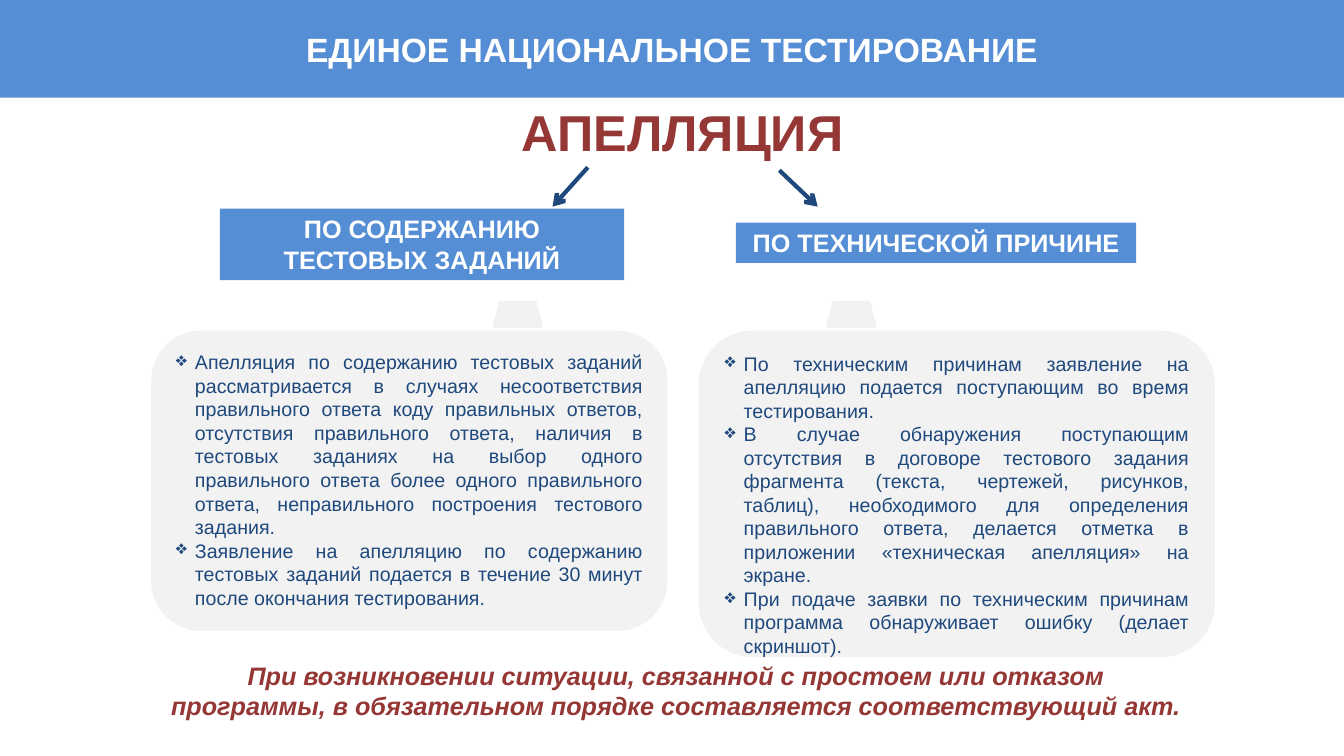
"""Build the slide on appeals in the unified national testing."""
from dataclasses import dataclass

from lxml.etree import SubElement
from pptx import Presentation
from pptx.dml.color import RGBColor
from pptx.enum.shapes import MSO_CONNECTOR, MSO_SHAPE
from pptx.enum.text import MSO_ANCHOR, MSO_AUTO_SIZE, PP_ALIGN
from pptx.oxml.ns import qn
from pptx.shapes.autoshape import Shape
from pptx.slide import Slide
from pptx.text.text import TextFrame
from pptx.util import Emu, Pt

PX = 9144


@dataclass(frozen=True)
class Theme:
    """Font, colours and type sizes of the slide."""
    font: str = "Arial"
    blue: str = "558ED5"
    navy: str = "1F497D"
    red: str = "953735"
    gray: str = "F2F2F2"
    white: str = "FFFFFF"
    heading: int = 36
    title: int = 24
    label: int = 18
    body: int = 14


@dataclass(frozen=True)
class Box:
    """Place of an element in px."""
    x: int
    y: int
    w: int
    h: int


@dataclass(frozen=True)
class Branch:
    """One kind of appeal: arrow, label, tab and card."""
    arrow: tuple[int, int, int, int]
    label_box: Box
    label: str
    tab_box: Box
    card_box: Box
    points: tuple[str, ...]


THEME = Theme()
BRANCHES = (
    Branch(
        (583, 166, 548, 205),
        Box(218, 207, 401, 71),
        "ПО СОДЕРЖАНИЮ ТЕСТОВЫХ ЗАДАНИЙ",
        Box(490, 300, 47, 24),
        Box(150, 328, 512, 298),
        (
            "Апелляция по содержанию тестовых заданий рассматривается в случаях "
            "несоответствия правильного ответа коду правильных ответов, отсутствия "
            "правильного ответа, наличия в тестовых заданиях на выбор одного "
            "правильного ответа более одного правильного ответа, неправильного "
            "построения тестового задания.",
            "Заявление на апелляцию по содержанию тестовых заданий подается в течение "
            "30 минут после окончания тестирования.",
        ),
    ),
    Branch(
        (773, 169, 811, 205),
        Box(730, 221, 397, 40),
        "ПО ТЕХНИЧЕСКОЙ ПРИЧИНЕ",
        Box(821, 300, 47, 24),
        Box(693, 328, 512, 324),
        (
            "По техническим причинам заявление на апелляцию подается поступающим во "
            "время тестирования.",
            "В случае обнаружения поступающим отсутствия в договоре тестового задания "
            "фрагмента (текста, чертежей, рисунков, таблиц), необходимого для "
            "определения правильного ответа, делается отметка в приложении "
            "«техническая апелляция» на экране.",
            "При подаче заявки по техническим причинам программа обнаруживает ошибку "
            "(делает скриншот).",
        ),
    ),
)


def px(n: int) -> Emu:
    """Turn px into EMU."""
    return Emu(n * PX)


def rgb(color: str) -> RGBColor:
    """Turn a hex string into a colour."""
    return RGBColor.from_string(color)


def write(tf: TextFrame, *texts: str, size: int, color: str, bold: bool = False,
          italic: bool = False, align: PP_ALIGN = PP_ALIGN.CENTER,
          anchor: MSO_ANCHOR = MSO_ANCHOR.TOP, bullet: str = "") -> None:
    """Write one formatted paragraph for each text."""
    tf.word_wrap = True
    tf.auto_size = MSO_AUTO_SIZE.NONE
    tf.vertical_anchor = anchor
    for i, text in enumerate(texts):
        p = tf.paragraphs[0] if i == 0 else tf.add_paragraph()
        p.alignment = align
        if bullet:
            pPr = p._p.get_or_add_pPr()
            pPr.set("marL", str(px(19)))
            pPr.set("indent", str(px(-19)))
            SubElement(pPr, qn("a:buChar")).set("char", bullet)
        r = p.add_run()
        r.text = text
        r.font.name = THEME.font
        r.font.size = Pt(size)
        r.font.bold = bold
        r.font.italic = italic
        r.font.color.rgb = rgb(color)


def add_box(s: Slide, kind: MSO_SHAPE, box: Box, fill: str, line: int = 0) -> Shape:
    """Add a flat filled shape, with a line of its own colour if asked."""
    sp = s.shapes.add_shape(kind, px(box.x), px(box.y), px(box.w), px(box.h))
    sp.shadow.inherit = False
    sp.fill.solid()
    sp.fill.fore_color.rgb = rgb(fill)
    if line:
        sp.line.color.rgb = rgb(fill)
        sp.line.width = Pt(line)
    else:
        sp.line.fill.background()
    return sp


def add_text(s: Slide, box: Box, text: str, size: int, italic: bool = False) -> None:
    """Add a bold red text box."""
    sp = s.shapes.add_textbox(px(box.x), px(box.y), px(box.w), px(box.h))
    write(sp.text_frame, text, size=size, color=THEME.red, bold=True, italic=italic)


def add_arrow(s: Slide, ends: tuple[int, int, int, int]) -> None:
    """Add a navy arrow between two points."""
    c = s.shapes.add_connector(MSO_CONNECTOR.STRAIGHT, *map(px, ends))
    c.line.color.rgb = rgb(THEME.navy)
    c.line.width = Pt(3)
    spPr = c._element.spPr
    SubElement(spPr.find(qn("a:ln")), qn("a:tailEnd")).set("type", "arrow")
    SubElement(spPr, qn("a:effectLst"))


def add_title(s: Slide, box: Box, text: str) -> None:
    """Turn the title placeholder into the top band."""
    sp = s.shapes.title
    sp.left, sp.top, sp.width, sp.height = map(px, (box.x, box.y, box.w, box.h))
    sp.fill.solid()
    sp.fill.fore_color.rgb = rgb(THEME.blue)
    write(sp.text_frame, text, size=THEME.title, color=THEME.white, bold=True,
          anchor=MSO_ANCHOR.MIDDLE)


def add_branch(s: Slide, branch: Branch) -> None:
    """Draw one kind of appeal."""
    card = add_box(s, MSO_SHAPE.ROUNDED_RECTANGLE, branch.card_box, THEME.gray)
    write(card.text_frame, *branch.points, size=THEME.body, color=THEME.navy,
          align=PP_ALIGN.JUSTIFY, bullet="❖")
    label = add_box(s, MSO_SHAPE.RECTANGLE, branch.label_box, THEME.blue)
    write(label.text_frame, branch.label, size=THEME.label, color=THEME.white, bold=True)
    add_arrow(s, branch.arrow)
    add_box(s, MSO_SHAPE.TRAPEZOID, branch.tab_box, THEME.gray, line=2)


def main() -> None:
    """Build and save the presentation."""
    prs = Presentation()
    prs.slide_width, prs.slide_height = px(1333), px(750)
    s = prs.slides.add_slide(prs.slide_layouts.get_by_name("Title Only"))
    add_title(s, Box(0, 0, 1333, 97), "ЕДИНОЕ НАЦИОНАЛЬНОЕ ТЕСТИРОВАНИЕ")
    add_text(s, Box(504, 95, 346, 71), "АПЕЛЛЯЦИЯ", THEME.heading)
    for branch in BRANCHES:
        add_branch(s, branch)
    add_text(s, Box(158, 650, 1025, 71),
             "При возникновении ситуации, связанной с простоем или отказом программы, "
             "в обязательном порядке составляется соответствующий акт.",
             THEME.label, italic=True)
    prs.save("out.pptx")


if __name__ == "__main__":
    main()
